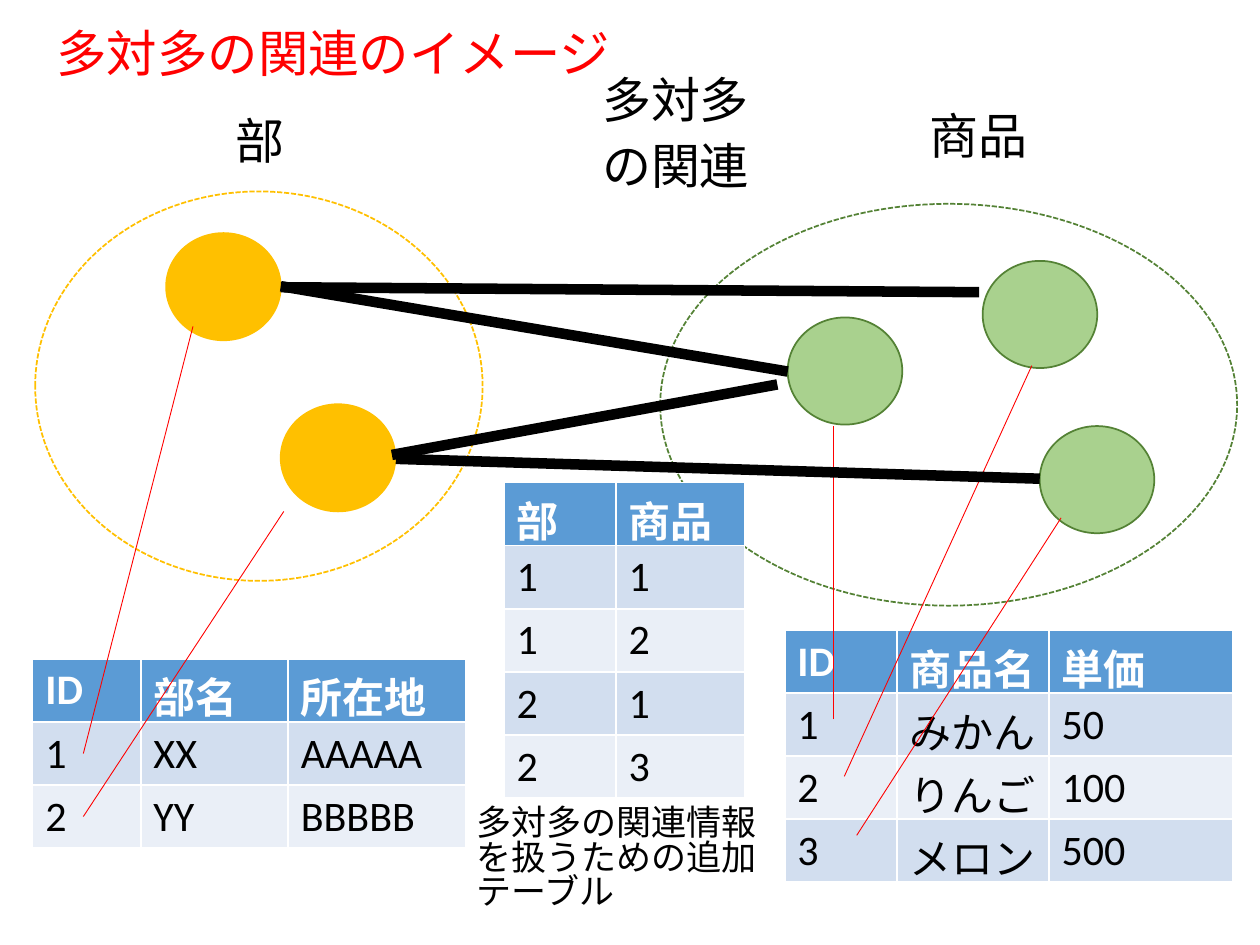
from lxml.etree import SubElement
from pptx import Presentation
from pptx.dml.color import RGBColor
from pptx.enum.dml import MSO_LINE
from pptx.enum.shapes import MSO_CONNECTOR, MSO_SHAPE
from pptx.enum.text import MSO_ANCHOR
from pptx.oxml.ns import qn
from pptx.util import Cm, Pt

COLORS = {
    "red": "FF0000", "black": "000000", "white": "FFFFFF",
    "orange": "FFC000", "green": "A9D18E", "dark_green": "548235",
    "header": "5B9BD5", "odd_row": "D2DEEF", "even_row": "EAEFF7",
}


def rgb(name):
    return RGBColor.from_string(COLORS[name])


class SlideBuilder:
    HEAD_FONT = "Arial"
    TABLE_FONT = "Calibri"

    def __init__(self, slide):
        self.shapes = slide.shapes

    def style(self, p, size, color, font, bold=False):
        for r in p.runs:
            r.font.size = Pt(size)
            r.font.name = font
            r.font.bold = bold
            r.font.color.rgb = rgb(color)

    def text(self, text, x, y, w, h, size=28, color="black",
             spacing=0.83, anchor=MSO_ANCHOR.TOP):
        tf = self.shapes.add_textbox(Cm(x), Cm(y), Cm(w), Cm(h)).text_frame
        tf.word_wrap = True
        tf.vertical_anchor = anchor
        tf.text = text
        for i, p in enumerate(tf.paragraphs):
            p.line_spacing = spacing
            p.space_before = Pt(10 if i else 0)
            self.style(p, size, color, self.HEAD_FONT)

    def ellipse(self, x, y, w, h, line, fill=None):
        sp = self.shapes.add_shape(MSO_SHAPE.OVAL, Cm(x), Cm(y), Cm(w), Cm(h))
        sp.shadow.inherit = False
        sp.line.color.rgb = rgb(line)
        sp.line.width = Pt(1)
        if fill:
            sp.fill.solid()
            sp.fill.fore_color.rgb = rgb(fill)
        else:
            sp.fill.background()
            sp.line.dash_style = MSO_LINE.SQUARE_DOT

    def line(self, x1, y1, x2, y2, color, width):
        cxn = self.shapes.add_connector(
            MSO_CONNECTOR.STRAIGHT, Cm(x1), Cm(y1), Cm(x2), Cm(y2))
        cxn.line.color.rgb = rgb(color)
        cxn.line.width = Pt(width)
        SubElement(cxn._element.spPr, qn("a:effectLst"))

    def table(self, rows, x, y, widths, row_height):
        table = self.shapes.add_table(
            len(rows), len(widths), Cm(x), Cm(y),
            Cm(sum(widths)), Cm(row_height * len(rows))).table
        for column, width in zip(table.columns, widths):
            column.width = Cm(width)
        for i, row in enumerate(rows):
            fill = "header" if i == 0 else "odd_row" if i % 2 else "even_row"
            for j, value in enumerate(row):
                cell = table.cell(i, j)
                cell.fill.solid()
                cell.fill.fore_color.rgb = rgb(fill)
                cell.text_frame.text = value
                self.style(cell.text_frame.paragraphs[0], 24,
                           "black" if i else "white", self.TABLE_FONT, i == 0)


def main():
    prs = Presentation()
    prs.slide_width, prs.slide_height = Cm(25.4), Cm(19.05)
    s = SlideBuilder(prs.slides.add_slide(prs.slide_layouts[6]))

    # Title
    s.text("多対多の関連のイメージ", 0.89, 0.48, 23.5, 1.3, size=28.8,
           color="red", spacing=0.9, anchor=MSO_ANCHOR.MIDDLE)

    # Sets and their members
    s.ellipse(13.31, 4.11, 11.63, 8.1, "dark_green")
    s.ellipse(0.71, 3.86, 9.02, 7.85, "orange")
    for x, y in [(19.81, 5.26), (15.88, 6.4), (20.96, 8.59)]:
        s.ellipse(x, y, 2.31, 2.16, "dark_green", "green")
    for x, y in [(3.35, 4.7), (5.66, 8.15)]:
        s.ellipse(x, y, 2.31, 2.16, "orange", "orange")

    # Department and product tables
    s.table([("ID", "部名", "所在地"),
             ("1", "XX", "AAAAA"),
             ("2", "YY", "BBBBB")], 0.66, 13.28, (2.18, 2.97, 3.58), 1.04)
    s.table([("ID", "商品名", "単価"),
             ("1", "みかん", "50"),
             ("2", "りんご", "100"),
             ("3", "メロン", "500")], 15.82, 12.7, (2.26, 3.07, 3.71), 1.04)

    # Set labels
    s.text("部", 4.5, 2.31, 4.62, 1.98)
    s.text("商品", 18.49, 2.21, 4.62, 1.98)
    s.text("多対多\nの関連", 11.89, 1.47, 4.62, 3.86)

    # Thin lines from table rows to members
    for ends in [(1.68, 15.19, 3.89, 6.58), (1.68, 16.46, 5.72, 10.31),
                 (16.81, 14.5, 16.81, 8.59), (17.02, 15.65, 20.8, 7.37),
                 (17.27, 16.84, 21.39, 10.44)]:
        s.line(*ends, "red", 0.5)

    # Thick lines between related members
    for ends in [(5.66, 5.77, 15.88, 7.49), (5.66, 5.79, 19.74, 5.89),
                 (7.9, 9.17, 15.67, 7.75), (7.98, 9.25, 20.96, 9.65)]:
        s.line(*ends, "black", 6)

    # Linking table and its note
    s.table([("部", "商品"), ("1", "1"), ("1", "2"), ("2", "1"), ("2", "3")],
            10.16, 9.73, (2.26, 2.59), 0.81)
    s.text("多対多の関連情報を扱うための追加テーブル",
           9.35, 16.15, 6.32, 2.8, size=20)

    prs.save("out.pptx")


if __name__ == "__main__":
    main()
